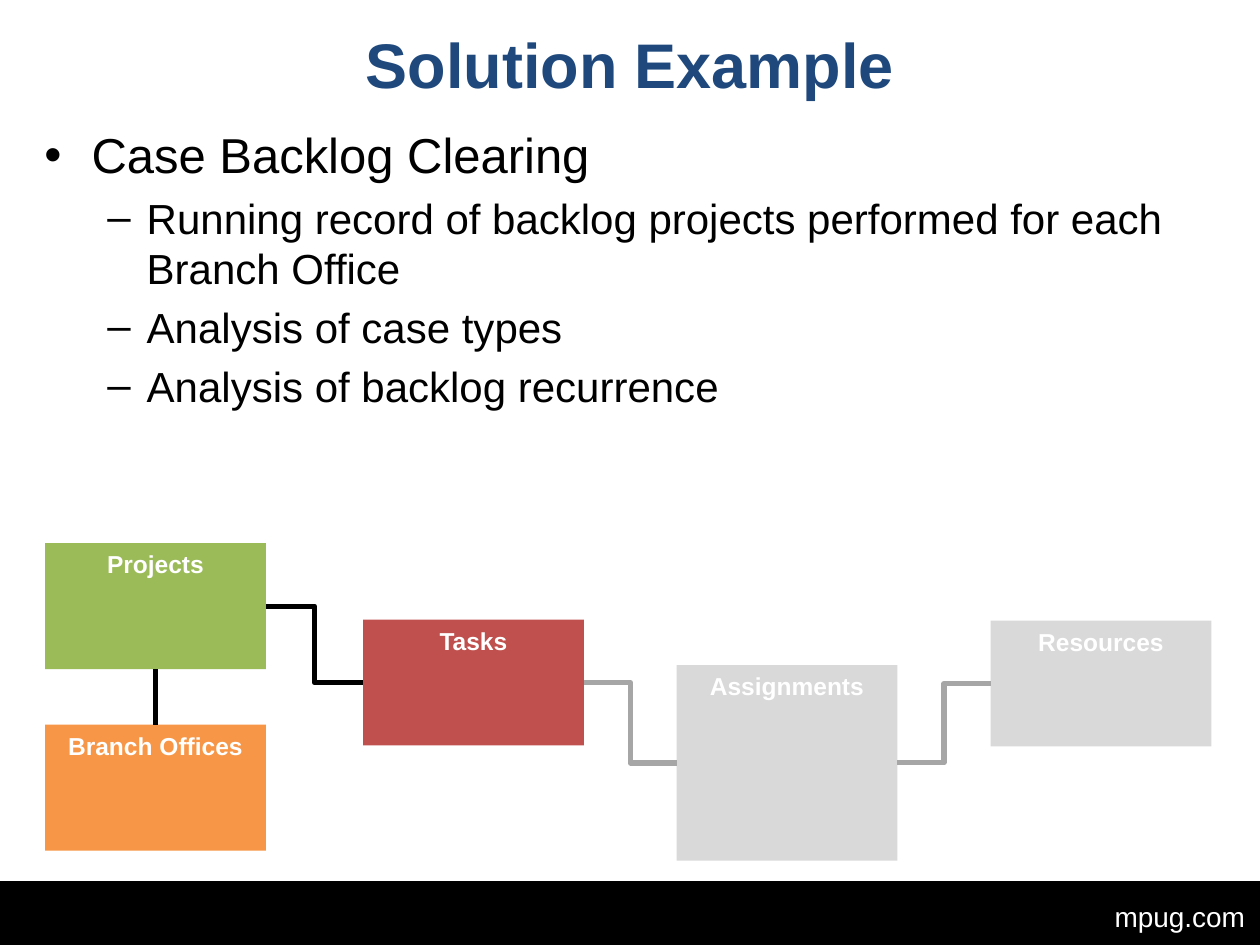
from typing import NamedTuple

from pptx import Presentation
from pptx.dml.color import RGBColor
from pptx.enum.shapes import MSO_CONNECTOR, MSO_SHAPE
from pptx.enum.text import MSO_ANCHOR, MSO_AUTO_SIZE, PP_ALIGN
from pptx.oxml.ns import qn
from pptx.util import Cm, Pt

HUES = {
    "navy": "1F497D", "black": "000000", "white": "FFFFFF",
    "green": "9BBB59", "red": "C0504D", "orange": "F79646",
    "pale": "D9D9D9", "grey": "A6A6A6",
}
BOTTOM, LEFT, RIGHT, TOP = 2, 1, 3, 0
WIDE = 4.45


class Box(NamedTuple):
    name: str
    left: float
    top: float
    high: float
    hue: str


class Link(NamedTuple):
    start: str
    side: int
    end: str
    port: int
    kind: MSO_CONNECTOR
    hue: str


BOXES = [
    Box("Projects", 0.91, 10.95, 2.54, "green"),
    Box("Tasks", 7.32, 12.49, 2.54, "red"),
    Box("Assignments", 13.64, 13.41, 3.94, "pale"),
    Box("Resources", 19.97, 12.51, 2.54, "pale"),
    Box("Branch Offices", 0.91, 14.61, 2.54, "orange"),
]
ELBOW, STRAIGHT = MSO_CONNECTOR.ELBOW, MSO_CONNECTOR.STRAIGHT
LINKS = [
    Link("Projects", RIGHT, "Tasks", LEFT, ELBOW, "black"),
    Link("Tasks", RIGHT, "Assignments", LEFT, ELBOW, "grey"),
    Link("Assignments", RIGHT, "Resources", LEFT, ELBOW, "grey"),
    Link("Projects", BOTTOM, "Branch Offices", TOP, STRAIGHT, "black"),
]
POINTS = [
    (0, "Case Backlog Clearing"),
    (1, "Running record of backlog projects performed for each Branch Office"),
    (1, "Analysis of case types"),
    (1, "Analysis of backlog recurrence"),
]


def tint(key: str) -> RGBColor:
    return RGBColor.from_string(HUES[key])


def write(para, text: str, size: int, hue: str, bold: bool = False) -> None:
    run = para.add_run()
    run.text = text
    font = run.font
    font.name, font.size, font.bold = "Arial", Pt(size), bold
    font.color.rgb = tint(hue)


def place(shape, left: float, top: float, wide: float, high: float) -> None:
    shape.left, shape.top = Cm(left), Cm(top)
    shape.width, shape.height = Cm(wide), Cm(high)


def block(slide, left: float, top: float, wide: float, high: float, hue: str):
    """Add a plain filled rectangle without outline or shadow."""
    shape = slide.shapes.add_shape(
        MSO_SHAPE.RECTANGLE, Cm(left), Cm(top), Cm(wide), Cm(high))
    shape.shadow.inherit = False
    shape.fill.solid()
    shape.fill.fore_color.rgb = tint(hue)
    shape.line.fill.background()
    return shape


def draw_box(slide, box: Box):
    shape = block(slide, box.left, box.top, WIDE, box.high, box.hue)
    frame = shape.text_frame
    frame.vertical_anchor = MSO_ANCHOR.TOP
    para = frame.paragraphs[0]
    para.alignment = PP_ALIGN.CENTER
    write(para, box.name, 14, "white", True)
    return shape


def draw_link(slide, link: Link, nodes: dict) -> None:
    line = slide.shapes.add_connector(link.kind, 0, 0, 0, 0)
    line.begin_connect(nodes[link.start], link.side)
    line.end_connect(nodes[link.end], link.port)
    line.line.color.rgb = tint(link.hue)
    line.line.width = Pt(3)
    props = line._element.spPr
    props.append(props.makeelement(qn("a:effectLst"), {}))


def draw_foot(slide) -> None:
    bar = block(slide, 0, 17.78, 25.4, 1.27, "black")
    bar.line.color.rgb = tint("black")
    bar.line.width = Pt(0.75)
    site = slide.shapes.add_textbox(Cm(22.22), Cm(18.01), Cm(3.18), Cm(0.94))
    site.text_frame.word_wrap = False
    site.text_frame.auto_size = MSO_AUTO_SIZE.SHAPE_TO_FIT_TEXT
    write(site.text_frame.paragraphs[0], "mpug.com", 16, "white")


def fill_text(slide) -> None:
    """Fill the title and the bulleted body."""
    title, body = slide.placeholders
    place(title, 0.64, 0.43, 24.13, 1.7)
    para = title.text_frame.paragraphs[0]
    para.alignment = PP_ALIGN.CENTER
    write(para, "Solution Example", 36, "navy", True)

    place(body, 0.64, 2.39, 24.13, 7.85)
    frame = body.text_frame
    frame.auto_size = MSO_AUTO_SIZE.NONE
    for rank, (level, text) in enumerate(POINTS):
        para = frame.add_paragraph() if rank else frame.paragraphs[0]
        para.level = level
        if rank == 0:
            para.space_before = Pt(0)
        write(para, text, 24 if level else 28, "black")


def main() -> None:
    deck = Presentation()
    deck.slide_width, deck.slide_height = Cm(25.4), Cm(19.05)
    slide = deck.slides.add_slide(deck.slide_layouts[1])
    draw_foot(slide)
    fill_text(slide)
    nodes = {box.name: draw_box(slide, box) for box in BOXES}
    for link in LINKS:
        draw_link(slide, link, nodes)
    deck.save("out.pptx")


if __name__ == "__main__":
    main()
